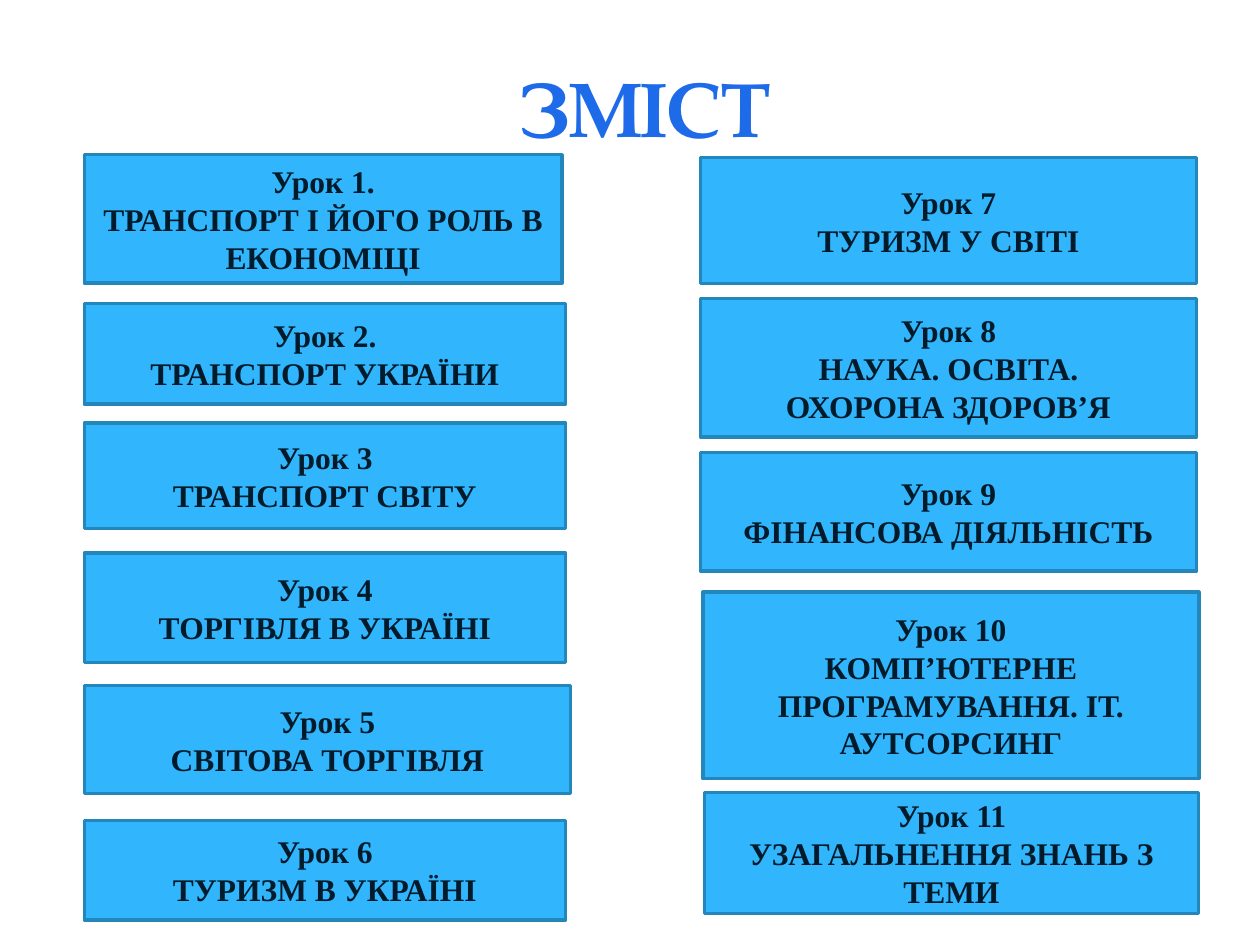
from dataclasses import dataclass

from pptx import Presentation
from pptx.dml.color import RGBColor
from pptx.enum.shapes import MSO_SHAPE as Preset
from pptx.enum.text import MSO_ANCHOR as Anchor, MSO_AUTO_SIZE as AutoSize, PP_ALIGN as Align
from pptx.util import Cm, Pt


@dataclass(frozen=True)
class Theme:
    title_color: RGBColor = RGBColor.from_string("1D6BE8")
    box_fill: RGBColor = RGBColor.from_string("31B6FD")
    box_line: RGBColor = RGBColor.from_string("2487BB")
    box_text: RGBColor = RGBColor.from_string("021B2B")
    title_font: str = "TeX Gyre Pagella"
    box_font: str = "Times New Roman"
    title_size: Pt = Pt(44)
    box_size: Pt = Pt(18)
    line_width: Pt = Pt(2)


THEME = Theme()

LEFT_LESSONS = [
    (0, 0, 9.63, 2.59, "Урок 1.\nТРАНСПОРТ І ЙОГО РОЛЬ В ЕКОНОМІЦІ"),
    (0, 3, 9.7, 2.03, "Урок 2.\nТРАНСПОРТ УКРАЇНИ"),
    (0, 5.41, 9.7, 2.13, "Урок 3\nТРАНСПОРТ СВІТУ"),
    (0, 8.03, 9.7, 2.21, "Урок 4\nТОРГІВЛЯ В УКРАЇНІ"),
    (0, 10.7, 9.8, 2.18, "Урок 5\nСВІТОВА ТОРГІВЛЯ"),
    (0, 13.42, 9.7, 2.01, "Урок 6\nТУРИЗМ В УКРАЇНІ"),
]
RIGHT_LESSONS = [
    (0, 0, 10, 2.54, "Урок 7\nТУРИЗМ У СВІТІ"),
    (0, 2.84, 10, 2.79, "Урок 8\nНАУКА. ОСВІТА.\nОХОРОНА ЗДОРОВ’Я"),
    (0, 5.94, 10, 2.39, "Урок 9\nФІНАНСОВА ДІЯЛЬНІСТЬ"),
    (0.05, 8.76, 10, 3.76, "Урок 10\nКОМП’ЮТЕРНЕ ПРОГРАМУВАННЯ. ІТ. АУТСОРСИНГ"),
    (0.08, 12.8, 9.96, 2.44, "Урок 11\nУЗАГАЛЬНЕННЯ ЗНАНЬ З ТЕМИ"),
]


def format_text(frame, font_name, size, color):
    frame.word_wrap = True
    frame.auto_size = AutoSize.NONE
    frame.vertical_anchor = Anchor.MIDDLE
    for para in frame.paragraphs:
        para.alignment = Align.CENTER
        for span in para.runs:
            span.font.name = font_name
            span.font.size = size
            span.font.bold = True
            span.font.color.rgb = color


def place_title(page, left, top, width, height):
    title = page.shapes.title
    title.left, title.top = Cm(left), Cm(top)
    title.width, title.height = Cm(width), Cm(height)
    title.text_frame.text = "ЗМІСТ"
    format_text(title.text_frame, THEME.title_font, THEME.title_size, THEME.title_color)


def add_lesson_column(page, left, top, lessons):
    for inset, drop, width, height, text in lessons:
        box = page.shapes.add_shape(
            Preset.RECTANGLE, Cm(left + inset), Cm(top + drop), Cm(width), Cm(height)
        )
        box.shadow.inherit = False
        box.fill.solid()
        box.fill.fore_color.rgb = THEME.box_fill
        box.line.color.rgb = THEME.box_line
        box.line.width = THEME.line_width
        box.text_frame.text = text
        format_text(box.text_frame, THEME.box_font, THEME.box_size, THEME.box_text)


def main():
    deck = Presentation()
    deck.slide_width, deck.slide_height = Cm(25.4), Cm(19.05)
    page = deck.slides.add_slide(deck.slide_layouts.get_by_name("Title Only"))
    place_title(page, 5.1, 0.76, 15.8, 2.77)
    add_lesson_column(page, 1.7, 3.12, LEFT_LESSONS)
    add_lesson_column(page, 14.12, 3.18, RIGHT_LESSONS)
    deck.save("out.pptx")


if __name__ == "__main__":
    main()
